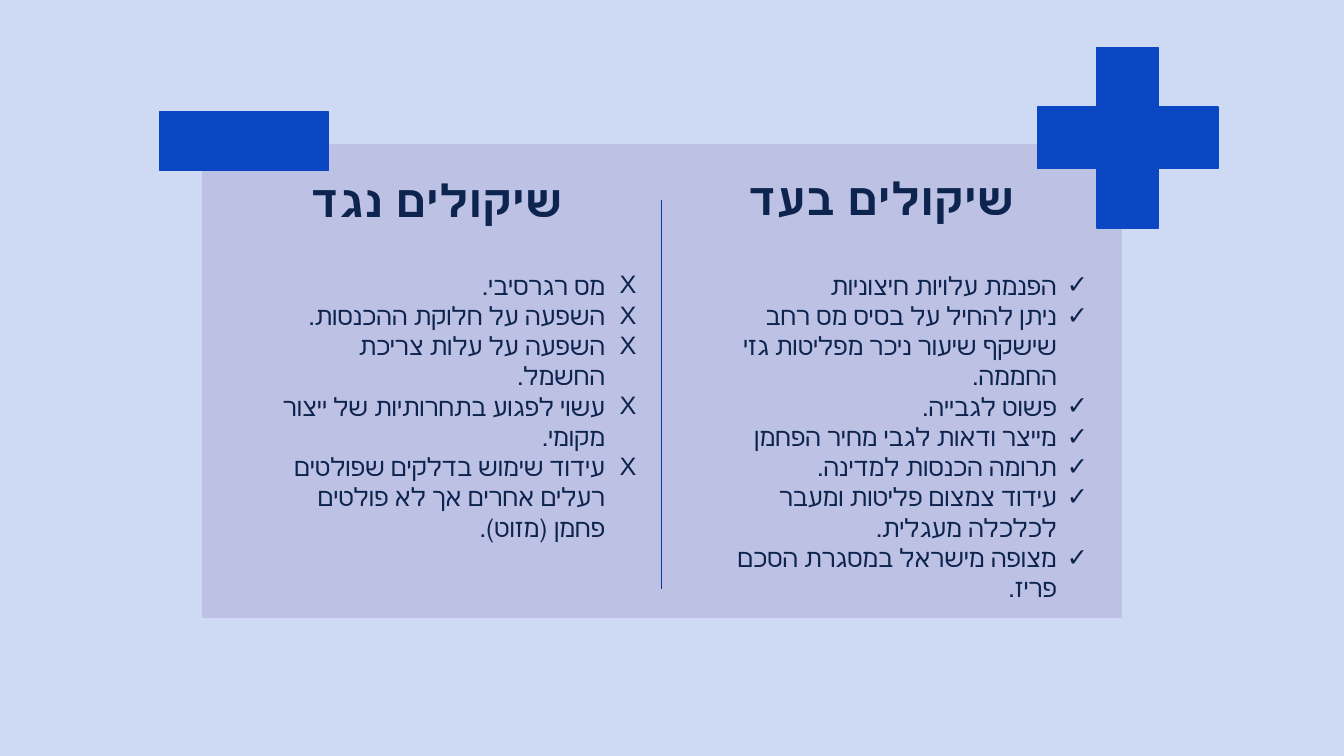
from dataclasses import dataclass

from lxml import etree
from pptx import Presentation
from pptx import util as u
from pptx.dml.color import RGBColor
from pptx.enum import shapes, text
from pptx.oxml.ns import qn

PALE, LILAC, BLUE, NAVY, RULE = "CED9F4", "BDC1E4", "0B47C3", "0D244F", "09399C"
FONT = "Arial"


@dataclass
class Block:
    kind: shapes.MSO_SHAPE
    box: tuple[float, float, float, float]
    fill: str
    line: str


@dataclass
class Side:
    head: str
    head_box: tuple[float, float, float, float]
    mark: str
    list_box: tuple[float, float, float, float]
    items: list[str]


BLOCKS = [
    Block(shapes.MSO_SHAPE.RECTANGLE, (2, 1.42, 9.14, 4.72), LILAC, PALE),
    Block(shapes.MSO_SHAPE.CROSS, (10.29, 0.47, 1.79, 1.79), BLUE, BLUE),
    Block(shapes.MSO_SHAPE.RECTANGLE, (1.58, 1.11, 1.68, 0.58), BLUE, BLUE),
]

SIDES = [
    Side("שיקולים בעד", (6.62, 1.68, 4.24, 4.04), "✓", (7.16, 2.63, 3.73, 3.74), [
        "הפנמת עלויות חיצוניות",
        "ניתן להחיל על בסיס מס רחב שישקף שיעור ניכר מפליטות גזי החממה.",
        "פשוט לגבייה.",
        "מייצר ודאות לגבי מחיר הפחמן",
        "תרומה הכנסות למדינה.",
        "עידוד צמצום פליטות ומעבר לכלכלה מעגלית.",
        "מצופה מישראל במסגרת הסכם פריז.",
    ]),
    Side("שיקולים נגד", (2.21, 1.7, 4.24, 4.04), "X", (2.68, 2.63, 3.73, 4.04), [
        "מס רגרסיבי.",
        "השפעה על חלוקת ההכנסות.",
        "השפעה על עלות צריכת החשמל.",
        "עשוי לפגוע בתחרותיות של ייצור מקומי.",
        "עידוד שימוש בדלקים שפולטים רעלים אחרים אך לא פולטים פחמן (מזוט).",
    ]),
]


def tint(code: str) -> RGBColor:
    return RGBColor.from_string(code)


def draw_block(slide, block: Block):
    shape = slide.shapes.add_shape(block.kind, *map(u.Inches, block.box))
    shape.shadow.inherit = False
    shape.fill.solid()
    shape.fill.fore_color.rgb = tint(block.fill)
    shape.line.color.rgb = tint(block.line)
    shape.line.width = u.Pt(1)
    return shape


def draw_rule(slide, x: float, top: float, end: float) -> None:
    rule = slide.shapes.add_connector(
        shapes.MSO_CONNECTOR.STRAIGHT, *map(u.Inches, (x, top, x, end)))
    rule.line.color.rgb = tint(RULE)
    rule.line.width = u.Pt(1)
    etree.SubElement(rule._element.spPr, qn("a:effectLst"))


def add_frame(slide, box: tuple[float, float, float, float]):
    frame = slide.shapes.add_textbox(*map(u.Inches, box)).text_frame
    frame.word_wrap = True
    return frame


def style(para, size: int, align: text.PP_ALIGN, bold: bool = False) -> None:
    para.alignment = align
    para._p.get_or_add_pPr().set("rtl", "1")
    font = para.font
    font.name, font.size, font.bold = FONT, u.Pt(size), bold
    font.color.rgb = tint(NAVY)


def add_mark(para, mark: str) -> None:
    props = para._p.get_or_add_pPr()
    indent = u.Inches(0.31)
    props.set("marL", str(indent))
    props.set("indent", str(-indent))
    etree.SubElement(props, qn("a:buFont"), typeface=FONT)
    etree.SubElement(props, qn("a:buChar"), char=mark)


def draw_head(slide, side: Side) -> None:
    frame = add_frame(slide, side.head_box)
    frame.margin_left = frame.margin_right = u.Inches(0.07)
    frame.margin_top = frame.margin_bottom = u.Inches(0.07)
    para = frame.paragraphs[0]
    para.text = side.head
    para.line_spacing = 0.9
    style(para, 32, text.PP_ALIGN.CENTER, True)


def draw_list(slide, side: Side) -> None:
    frame = add_frame(slide, side.list_box)
    frame.auto_size = text.MSO_AUTO_SIZE.SHAPE_TO_FIT_TEXT
    frame.text = "\n".join(side.items)
    for para in frame.paragraphs:
        add_mark(para, side.mark)
        style(para, 18, text.PP_ALIGN.RIGHT)


def main() -> None:
    deck = Presentation()
    deck.slide_width, deck.slide_height = u.Inches(13.33), u.Inches(7.5)
    slide = deck.slides.add_slide(deck.slide_layouts.get_by_name("Blank"))
    slide.background.fill.solid()
    slide.background.fill.fore_color.rgb = tint(PALE)

    panel, plus, minus = [draw_block(slide, block) for block in BLOCKS]
    plus.adjustments[0] = 0.33
    draw_rule(slide, 6.56, 1.98, 5.84)
    for side in SIDES:
        draw_head(slide, side)
        draw_list(slide, side)
    deck.save("out.pptx")


if __name__ == "__main__":
    main()
